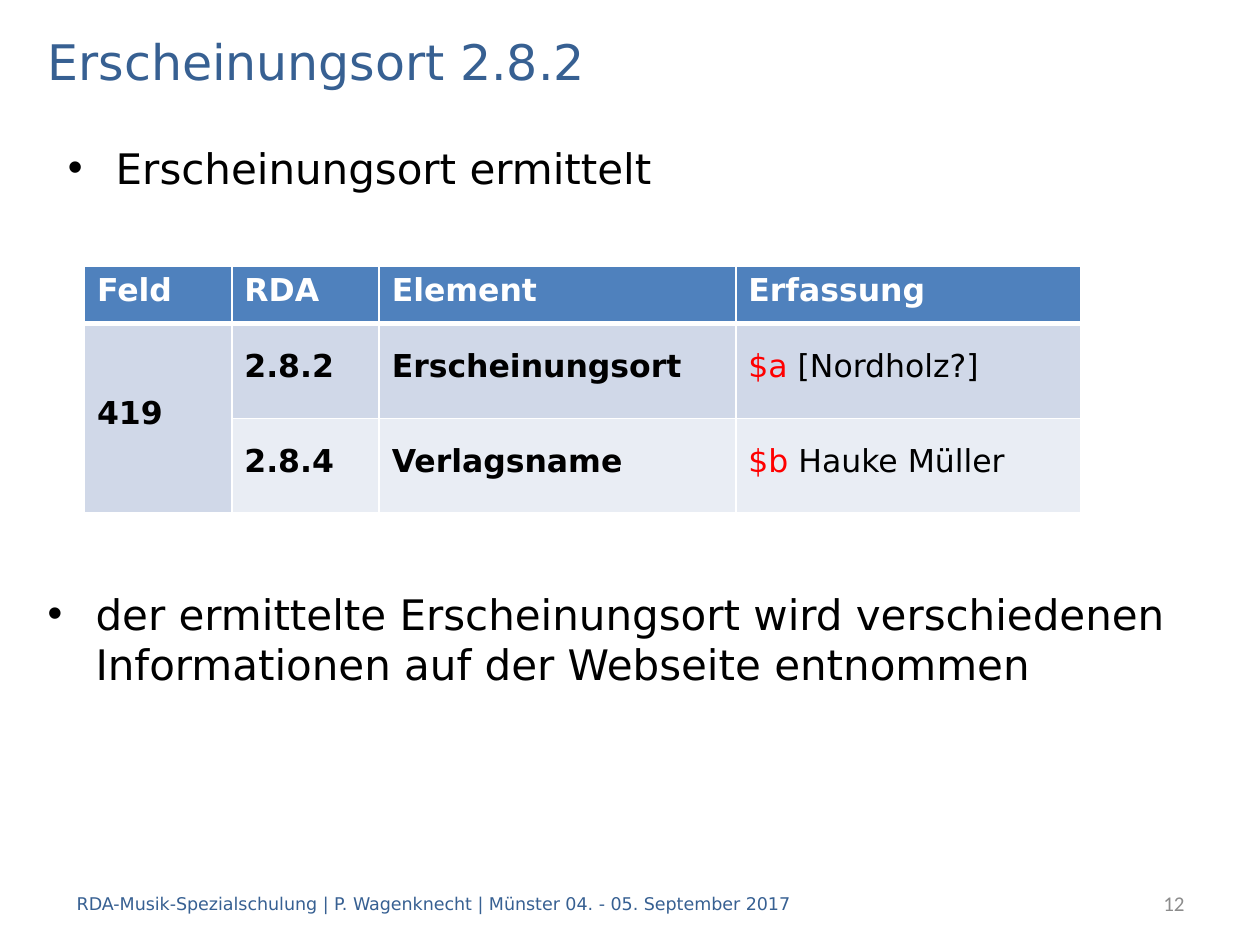
from lxml import etree
from pptx import Presentation
from pptx.dml.color import RGBColor
from pptx.enum import text as t
from pptx.oxml import ns
from pptx.util import Inches, Pt

NAVY = RGBColor(0x37, 0x60, 0x92)
BLUE = RGBColor(0x4F, 0x81, 0xBD)
BAND = RGBColor(0xD0, 0xD8, 0xE8)
PALE = RGBColor(0xE9, 0xED, 0xF4)
RED = RGBColor(0xFF, 0, 0)
GREY = RGBColor(0x8C, 0x8C, 0x8C)
BLACK = RGBColor(0, 0, 0)
WHITE = RGBColor(0xFF, 0xFF, 0xFF)
SANS = "DejaVu Sans"
MID = t.MSO_ANCHOR.MIDDLE


def node(parent, tag, **attrs):
    return etree.SubElement(parent, ns.qn("a:" + tag), attrs)


def add_run(para, words, size, color, name=SANS, bold=False):
    run = para.add_run()
    run.text = words
    look = {"size": Pt(size), "name": name, "bold": bold}
    for key, value in look.items():
        setattr(run.font, key, value)
    run.font.color.rgb = color


def add_text(slide, box, words, size, color, name=SANS,
             anchor=MID, align=t.PP_ALIGN.LEFT):
    frame = slide.shapes.add_textbox(*map(Inches, box)).text_frame
    frame.word_wrap = True
    frame.vertical_anchor = anchor
    para = frame.paragraphs[0]
    para.alignment = align
    add_run(para, words, size, color, name)
    return para


def add_bullet(slide, box, words):
    para = add_text(slide, box, words, 24, BLACK, anchor=t.MSO_ANCHOR.TOP)
    props = para._p.get_or_add_pPr()
    indent = Inches(0.38)
    props.set("marL", str(indent))
    props.set("indent", str(-indent))
    # Space before is relative to the text size
    node(node(props, "spcBef"), "spcPct", val="20000")
    node(props, "buFont", typeface="Arial")
    node(props, "buChar", char="•")


def style_cell(cell, fill, top, bottom):
    props = cell._tc.get_or_add_tcPr()
    for side, width in {"L": 1, "R": 1, "T": top, "B": bottom}.items():
        line = node(props, "ln" + side, w=str(Pt(width)))
        node(node(line, "solidFill"), "srgbClr", val=str(WHITE))
    cell.fill.solid()
    cell.fill.fore_color.rgb = fill


def add_grid(slide, box):
    heads = ["Feld", "RDA", "Element", "Erfassung"]
    # Field number, rule, element, subfield code, value
    rows = [("419", "2.8.2", "Erscheinungsort", "$a", " [Nordholz?]"),
            ("", "2.8.4", "Verlagsname", "$b", " Hauke Müller")]
    table = slide.shapes.add_table(3, 4, *map(Inches, box)).table
    for col, width in zip(table.columns, [1.17, 1.17, 2.83, 2.74]):
        col.width = Inches(width)
    for row, height in zip(table.rows, [0.46, 0.75, 0.75]):
        row.height = Inches(height)

    # Header row
    for c, head in enumerate(heads):
        cell = table.cell(0, c)
        style_cell(cell, BLUE, 1, 3)
        add_run(cell.text_frame.paragraphs[0], head, 18, WHITE, bold=True)

    # Body rows
    table.cell(1, 0).merge(table.cell(2, 0))
    gaps = {"line_spacing": Pt(16), "space_before": Pt(6),
            "space_after": Pt(6)}
    for r, (*labels, code, value) in enumerate(rows, 1):
        for c in range(len(heads)):
            cell = table.cell(r, c)
            style_cell(cell, BAND if r == 1 else PALE, 3 if r == 1 else 1, 1)
            if cell.is_spanned:
                continue
            cell.vertical_anchor = MID
            para = cell.text_frame.paragraphs[0]
            for key, gap in gaps.items():
                setattr(para, key, gap)
            if c < len(labels):
                add_run(para, labels[c], 18, BLACK, bold=True)
            else:
                add_run(para, code, 18, RED)
                add_run(para, value, 18, BLACK)


def add_footer(slide, left, top):
    add_text(slide, (left, top, 8.35, 0.4),
             "RDA-Musik-Spezialschulung | P. Wagenknecht | "
             "Münster 04. - 05. September 2017", 10, NAVY)
    add_text(slide, (left + 7.4, top, 1.59, 0.4), "12", 12, GREY,
             "Calibri", align=t.PP_ALIGN.RIGHT)


def main():
    deck = Presentation()
    deck.slide_width, deck.slide_height = Inches(10), Inches(7.5)
    slide = deck.slides.add_slide(deck.slide_layouts[6])
    add_text(slide, (0.28, 0.2, 9.45, 0.56), "Erscheinungsort 2.8.2", 28, NAVY)
    add_bullet(slide, (0.44, 1.08, 9.45, 0.71), "Erscheinungsort ermittelt")
    add_grid(slide, (0.67, 2.11, 7.92, 1.95))
    add_bullet(slide, (0.28, 4.62, 9.45, 1.34),
               "der ermittelte Erscheinungsort wird verschiedenen "
               "Informationen auf der Webseite entnommen")
    add_footer(slide, 0.51, 6.97)
    deck.save("out.pptx")


if __name__ == "__main__":
    main()
